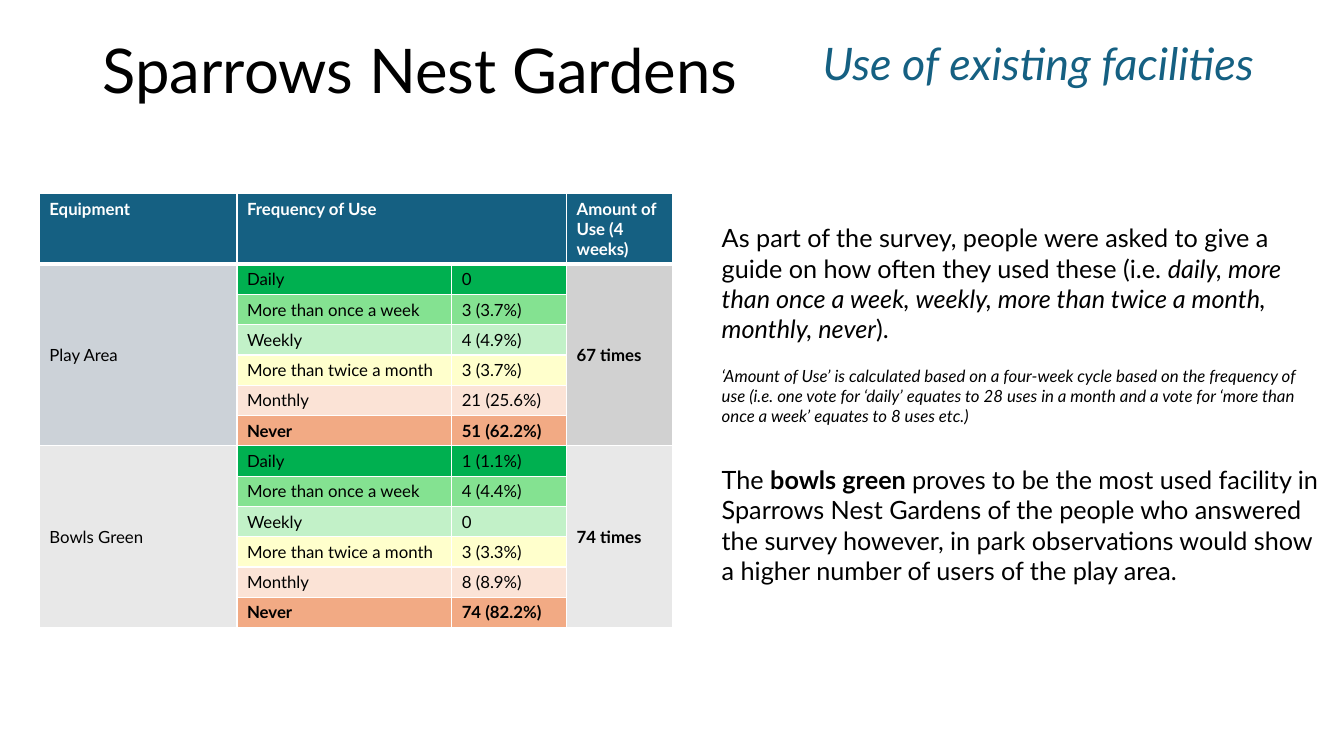
from lxml import etree
from pptx import Presentation, util as u
from pptx.dml.color import RGBColor
from pptx.enum import text
from pptx.oxml import ns

BLACK = RGBColor(0x00, 0x00, 0x00)
WHITE = RGBColor(0xFF, 0xFF, 0xFF)
BLUE = RGBColor(0x15, 0x60, 0x82)
BLUE_GREY = RGBColor(0xCC, 0xD2, 0xD8)
MID_GREY = RGBColor(0xD1, 0xD1, 0xD1)
PALE_GREY = RGBColor(0xE8, 0xE8, 0xE8)
GREEN = RGBColor(0x00, 0xB0, 0x50)
MID_GREEN = RGBColor(0x84, 0xE2, 0x91)
PALE_GREEN = RGBColor(0xC2, 0xF1, 0xC8)
YELLOW = RGBColor(0xFF, 0xFF, 0xCC)
PEACH = RGBColor(0xFB, 0xE3, 0xD6)
ORANGE = RGBColor(0xF2, 0xAA, 0x84)

FREQUENCIES = [
    ("Daily", GREEN),
    ("More than once a week", MID_GREEN),
    ("Weekly", PALE_GREEN),
    ("More than twice a month", YELLOW),
    ("Monthly", PEACH),
    ("Never", ORANGE),
]
FACILITIES = [
    ("Play Area", "67 times", BLUE_GREY, MID_GREY,
     ["0", "3 (3.7%)", "4 (4.9%)", "3 (3.7%)", "21 (25.6%)", "51 (62.2%)"]),
    ("Bowls Green", "74 times", PALE_GREY, PALE_GREY,
     ["1 (1.1%)", "4 (4.4%)", "0", "3 (3.3%)", "8 (8.9%)", "74 (82.2%)"]),
]
COLUMN_WIDTHS = [1.96, 2.13, 1.14, 1.05]
HEADER_HEIGHT = 0.7
ROW_HEIGHT = 0.3


class SlideBuilder:
    font = "Lato"

    def __init__(self, s):
        self.s = s

    def run(self, p, words, size, color=BLACK, **extra):
        r = p.add_run()
        r.text = words
        r.font.color.rgb = color
        style = {"name": self.font, "size": u.Pt(size), **extra}
        for key, value in style.items():
            setattr(r.font, key, value)

    def text_box(self, box, paragraphs, size, color=BLACK,
                 anchor=text.MSO_ANCHOR.TOP, **paragraph_format):
        sp = self.s.shapes.add_textbox(*[u.Inches(v) for v in box])
        tf = sp.text_frame
        tf.word_wrap = True
        tf.vertical_anchor = anchor
        for i, runs in enumerate(paragraphs):
            p = tf.add_paragraph() if i else tf.paragraphs[0]
            for key, value in paragraph_format.items():
                setattr(p, key, value)
            for words, style in runs:
                self.run(p, words, size, color, **style)
        return tf

    def table(self, left, top, widths, heights):
        box = [u.Inches(v) for v in (left, top, sum(widths), sum(heights))]
        table = self.s.shapes.add_table(len(heights), len(widths), *box).table
        for column, width in zip(table.columns, widths):
            column.width = u.Inches(width)
        for row, height in zip(table.rows, heights):
            row.height = u.Inches(height)
        return table

    def borders(self, cell, **widths):
        tc_pr = cell._tc.get_or_add_tcPr()
        for side in "LRTB":
            width = u.Pt(widths.get(side, 1))
            line = etree.SubElement(tc_pr, ns.qn(f"a:ln{side}"), w=str(width))
            fill = etree.SubElement(line, ns.qn("a:solidFill"))
            etree.SubElement(fill, ns.qn("a:srgbClr"), val=str(WHITE))

    def cell(self, cell, words, fill, color=BLACK, bold=False,
             anchor=text.MSO_ANCHOR.TOP):
        cell.fill.solid()
        cell.fill.fore_color.rgb = fill
        cell.vertical_anchor = anchor
        self.run(cell.text_frame.paragraphs[0], words, 12, color, bold=bold)


def add_usage_table(slide):
    size = len(FREQUENCIES)
    heights = [HEADER_HEIGHT] + [ROW_HEIGHT] * size * len(FACILITIES)
    table = slide.table(0.39, 1.92, COLUMN_WIDTHS, heights)
    for row in range(len(heights)):
        for column in range(len(COLUMN_WIDTHS)):
            edges = {"B": 3} if row == 0 else {"T": 3} if row == 1 else {}
            slide.borders(table.cell(row, column), **edges)

    table.cell(0, 1).merge(table.cell(0, 2))
    headings = {0: "Equipment", 1: "Frequency of Use", 3: "Amount of Use (4 weeks)"}
    for column, words in headings.items():
        slide.cell(table.cell(0, column), words, BLUE, WHITE, True)

    middle = text.MSO_ANCHOR.MIDDLE
    for i, (name, total, name_fill, total_fill, counts) in enumerate(FACILITIES):
        first = 1 + i * size
        for column in (0, 3):
            table.cell(first, column).merge(table.cell(first + size - 1, column))
        slide.cell(table.cell(first, 0), name, name_fill, anchor=middle)
        slide.cell(table.cell(first, 3), total, total_fill, bold=True, anchor=middle)
        for row, ((frequency, fill), count) in enumerate(zip(FREQUENCIES, counts), first):
            bold = frequency == "Never"
            slide.cell(table.cell(row, 1), frequency, fill, bold=bold)
            slide.cell(table.cell(row, 2), count, fill, bold=bold)


def main():
    prs = Presentation()
    prs.slide_width, prs.slide_height = u.Inches(13.33), u.Inches(7.5)
    slide = SlideBuilder(prs.slides.add_slide(prs.slide_layouts[6]))

    slide.text_box((0.92, 0, 11.5, 1.45), [[("Sparrows Nest Gardens", {})]], 44,
                   anchor=text.MSO_ANCHOR.MIDDLE, line_spacing=0.9)
    slide.text_box((8.06, 0.31, 5.48, 0.64),
                   [[("Use of existing facilities", {"italic": True})]], 32, BLUE)
    add_usage_table(slide)

    survey = [
        ("As part of the survey, people were asked to give a guide on how often "
         "they used these (i.e. ", {}),
        ("daily, more than once a week, weekly, more than twice a month, "
         "monthly, never", {"italic": True}),
        (").", {}),
    ]
    finding = [
        ("The ", {}),
        ("bowls green ", {"bold": True}),
        ("proves to be the most used facility in Sparrows Nest Gardens of the "
         "people who answered the survey however, in park observations would "
         "show a higher number of users of the play area.", {}),
    ]
    tf = slide.text_box((7.06, 2.16, 6.12, 3.74), [survey, finding], 18)
    tf.paragraphs[1].space_before = u.Pt(86.4)

    note = ("‘Amount of Use’ is calculated based on a four-week cycle based on the "
            "frequency of use (i.e. one vote for ‘daily’ equates to 28 uses in a "
            "month and a vote for ‘more than once a week’ equates to 8 uses etc.)")
    slide.text_box((7.06, 3.58, 6.12, 0.71), [[(note, {"italic": True})]], 12)

    prs.save("out.pptx")


if __name__ == "__main__":
    main()
